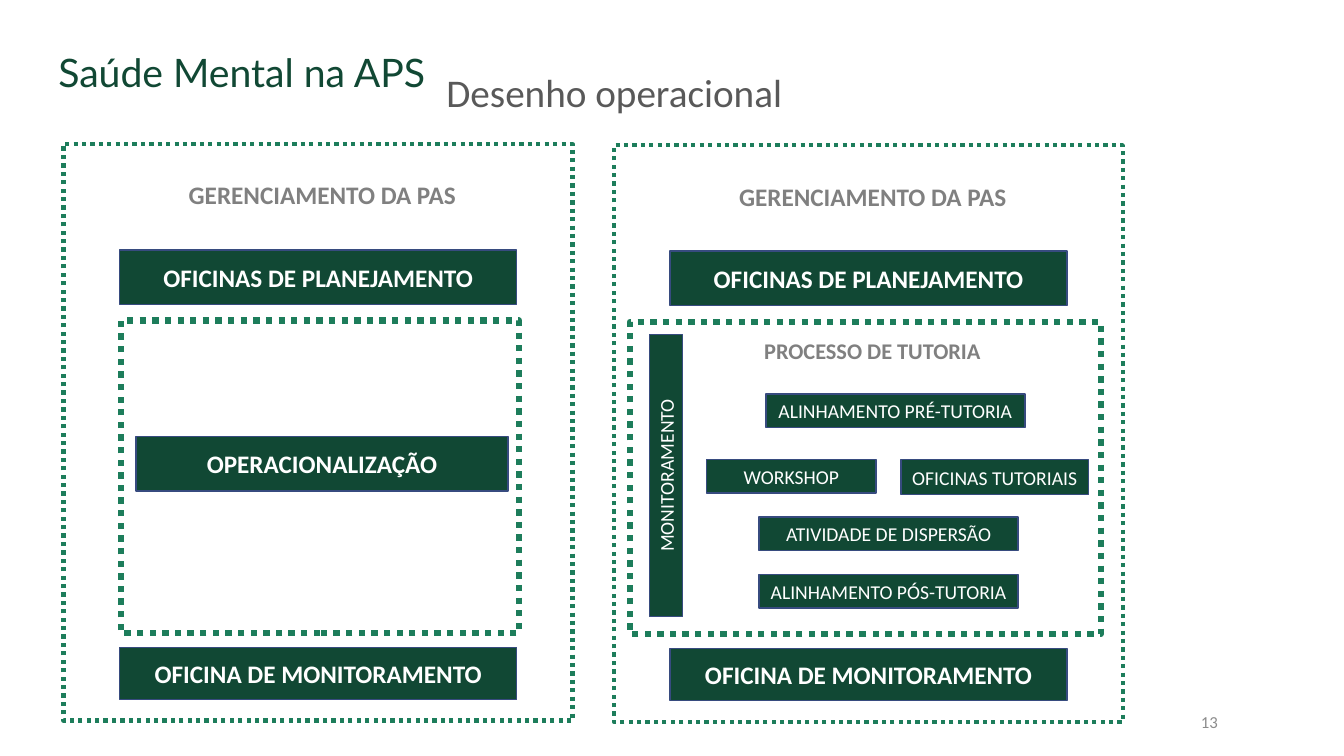
from pptx import Presentation
from pptx.dml.color import RGBColor
from pptx.enum.dml import MSO_LINE
from pptx.enum.shapes import MSO_SHAPE as Shape
from pptx.enum.text import MSO_ANCHOR as Anchor, PP_ALIGN as Align
from pptx.util import Cm, Pt

# Content: places are (left, top, width, height) in centimetres
BRAND = "Saúde Mental na APS"
TITLE = "Desenho operacional"
PAGE_NUMBER = "13"

DARK_GREEN, GREEN, NAVY = "114834", "1D7D5B", "374B7F"
GRAY, TITLE_GRAY, NUMBER_GRAY, WHITE = "808080", "595959", "8C8C8C", "FFFFFF"

PANEL_SIZE = (12.83, 14.53)
PANELS = [
    {"origin": (1.6, 3.63), "inner": (3.05, 10.03)},
    {"origin": (15.47, 3.66), "inner": (15.88, 11.86)},
]
PANEL_HEADING = "GERENCIAMENTO DA PAS"
PANEL_BARS = [  # text, top within the panel, height
    ("OFICINAS DE PLANEJAMENTO", 2.67, 1.37),
    ("OFICINA DE MONITORAMENTO", 12.68, 1.32),
]
BAR_INDENT, BAR_WIDTH = 1.42, 10.0
INNER_TOP, INNER_HEIGHT = 4.45, 7.87

OPERATION = ("OPERACIONALIZAÇÃO", (3.43, 11.0, 9.37, 1.37))
TUTORING_HEADING = ("PROCESSO DE TUTORIA", (17.91, 8.36, 8.15, 0.94))
TUTORING_STEPS = [
    ("ALINHAMENTO PRÉ-TUTORIA", (19.3, 9.93, 6.53, 0.84)),
    ("WORKSHOP", (17.81, 11.58, 4.27, 0.84)),
    ("OFICINAS TUTORIAIS", (22.71, 11.58, 4.72, 0.89)),
    ("ATIVIDADE DE DISPERSÃO", (19.13, 13.03, 6.53, 0.84)),
    ("ALINHAMENTO PÓS-TUTORIA", (19.13, 14.48, 6.53, 0.84)),
]
MONITORING = ("MONITORAMENTO", (13.23, 11.56, 7.11, 0.84))


def color(value):
    return RGBColor.from_string(value)


def write(box, text, size, ink, bold=False, align=Align.CENTER,
          anchor=Anchor.MIDDLE, font="Calibri"):
    frame = box.text_frame
    frame.word_wrap = True
    frame.vertical_anchor = anchor
    para = frame.paragraphs[0]
    para.text = text
    para.alignment = align
    para.font.name, para.font.size, para.font.bold = font, Pt(size), bold
    para.font.color.rgb = color(ink)


def add_label(place, text, size, ink, **style):
    box = page.shapes.add_textbox(*map(Cm, place))
    write(box, text, size, ink, **style)


def add_rectangle(place, line, width):
    box = page.shapes.add_shape(Shape.RECTANGLE, *map(Cm, place))
    box.shadow.inherit = False
    box.line.color.rgb = color(line)
    box.line.width = Pt(width)
    return box


def add_bar(place, text, size, bold=False):
    box = add_rectangle(place, NAVY, 1)
    box.fill.solid()
    box.fill.fore_color.rgb = color(DARK_GREEN)
    box.text_frame.margin_left = box.text_frame.margin_right = Cm(0.1)
    write(box, text, size, WHITE, bold)
    return box


def add_dotted_frame(place, width):
    box = add_rectangle(place, GREEN, width)
    box.fill.background()
    box.line.dash_style = MSO_LINE.ROUND_DOT


deck = Presentation()
deck.slide_width, deck.slide_height = Cm(33.87), Cm(19.05)
page = deck.slides.add_slide(deck.slide_layouts[5])

# Headings and page number
title = page.shapes.title
title.left, title.top, title.width, title.height = map(Cm, (10.77, 0.56, 9.42, 3.68))
write(title, TITLE, 28, TITLE_GRAY)
title.text_frame.paragraphs[0].line_spacing = 0.9
add_label((1.22, 1.09, 17.98, 1.45), BRAND, 28, DARK_GREEN,
          align=Align.LEFT, anchor=Anchor.TOP, font="Lato")
add_label((23.32, 17.68, 7.62, 1.02), PAGE_NUMBER, 12, NUMBER_GRAY, align=Align.RIGHT)

# Parts shared by both panels
for panel in PANELS:
    left, top = panel["origin"]
    inner_left, inner_width = panel["inner"]
    add_dotted_frame((left, top, *PANEL_SIZE), 3)
    add_dotted_frame((inner_left, top + INNER_TOP, inner_width, INNER_HEIGHT), 4.5)
    add_label((left + 2.45, top + 0.81, 8.15, 0.94), PANEL_HEADING, 18, GRAY, bold=True)
    for text, offset, height in PANEL_BARS:
        add_bar((left + BAR_INDENT, top + offset, BAR_WIDTH, height), text, 18, bold=True)

# Left panel: operation
text, place = OPERATION
add_bar(place, text, 18, bold=True)

# Right panel: tutoring process
text, place = TUTORING_HEADING
add_label(place, text, 16, GRAY, bold=True)
for text, place in TUTORING_STEPS:
    add_bar(place, text, 14)
text, place = MONITORING
add_bar(place, text, 14).rotation = 270

deck.save("out.pptx")
